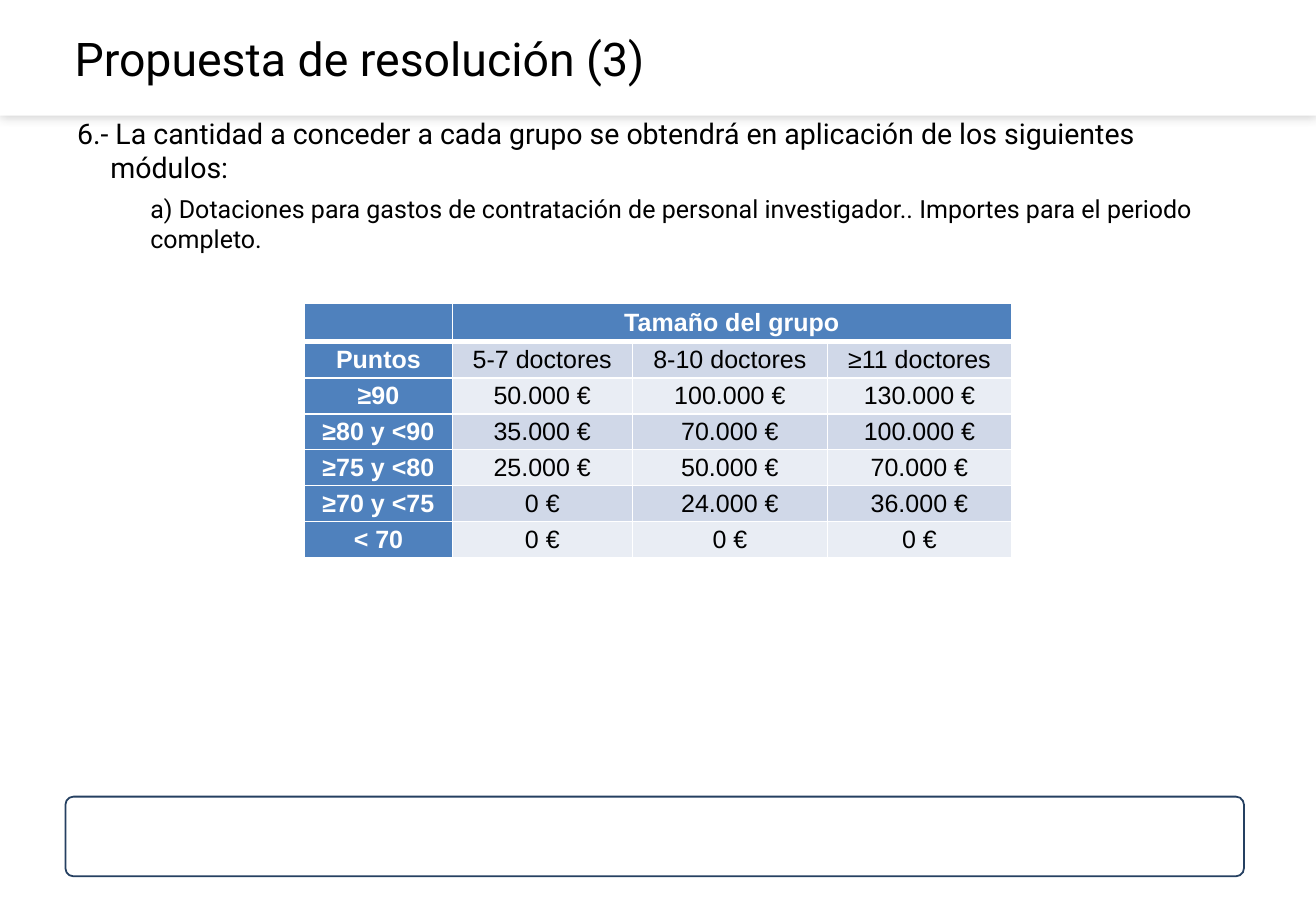
from lxml.etree import SubElement
from pptx import Presentation
from pptx.dml.color import RGBColor
from pptx.enum.shapes import MSO_SHAPE
from pptx.enum.text import MSO_ANCHOR, PP_ALIGN
from pptx.oxml.ns import qn
from pptx.util import Inches, Pt

TITLE = "Propuesta de resolución (3)"
MODULES = "6.- La cantidad a conceder a cada grupo se obtendrá en aplicación de los siguientes módulos:"
STAFF = ("a) Dotaciones para gastos de contratación de personal investigador.. "
         "Importes para el periodo completo.")
GRANTS = [
    ("", "Tamaño del grupo", "", ""),
    ("Puntos", "5-7 doctores", "8-10 doctores", "≥11 doctores"),
    ("≥90", "50.000 €", "100.000 €", "130.000 €"),
    ("≥80 y <90", "35.000 €", "70.000 €", "100.000 €"),
    ("≥75 y <80", "25.000 €", "50.000 €", "70.000 €"),
    ("≥70 y <75", "0 €", "24.000 €", "36.000 €"),
    ("< 70", "0 €", "0 €", "0 €"),
]
COLUMN_WIDTHS = (1.15, 1.4, 1.52, 1.43)
ROW_HEIGHT = 0.28
COLORS = {"white": "FFFFFF", "black": "000000", "navy": "254061",
          "header": "4F81BD", "dark_band": "D0D8E8", "light_band": "E9EDF4"}


def rgb(name):
    return RGBColor.from_string(COLORS[name])


def write_text(paragraph, text, size=14, font="Roboto", color="black", bold=False,
               align=PP_ALIGN.LEFT, left=0, indent=0, before=0):
    """Fill a paragraph; left and indent are in inches, before in points."""
    paragraph.alignment = align
    paragraph.space_before = Pt(before)
    properties = paragraph._p.get_or_add_pPr()
    properties.set("marL", str(Inches(left)))
    properties.set("indent", str(Inches(indent)))
    run = paragraph.add_run()
    run.text = text
    run.font.size, run.font.name, run.font.bold = Pt(size), font, bold
    run.font.color.rgb = rgb(color)


def add_panel(slide, kind, left, top, width, height):
    shape = slide.shapes.add_shape(kind, Inches(left), Inches(top), Inches(width), Inches(height))
    shape.shadow.inherit = False
    shape.fill.solid()
    shape.fill.fore_color.rgb = rgb("white")
    shape.line.fill.background()
    return shape


def add_text_frame(slide, left, top, width, height, anchor=MSO_ANCHOR.TOP):
    box = slide.shapes.add_textbox(Inches(left), Inches(top), Inches(width), Inches(height))
    frame = box.text_frame
    frame.word_wrap = True
    frame.vertical_anchor = anchor
    frame.margin_left = frame.margin_right = Inches(0.07)
    frame.margin_top = frame.margin_bottom = Inches(0.03)
    return frame


def add_soft_shadow(shape):
    effects = shape._element.spPr.find(qn("a:effectLst"))
    shadow = SubElement(effects, qn("a:outerShdw"), blurRad=str(Pt(6)), dist="0",
                        dir=str(225 * 60000), rotWithShape="0")
    color = SubElement(shadow, qn("a:srgbClr"), val=COLORS["black"])
    SubElement(color, qn("a:alpha"), val="20000")


def set_borders(cell, bottom=1):
    """Draw white borders, placed before the fill as the schema asks."""
    properties = cell._tc.get_or_add_tcPr()
    for position, (side, width) in enumerate((("L", 1), ("R", 1), ("T", 1), ("B", bottom))):
        line = SubElement(properties, qn(f"a:ln{side}"), w=str(Pt(width)))
        fill = SubElement(line, qn("a:solidFill"))
        SubElement(fill, qn("a:srgbClr"), val=COLORS["white"])
        properties.insert(position, line)


def add_grants_table(slide, left, top):
    table = slide.shapes.add_table(
        len(GRANTS), len(COLUMN_WIDTHS), Inches(left), Inches(top),
        Inches(sum(COLUMN_WIDTHS)), Inches(ROW_HEIGHT * len(GRANTS))).table
    for column, width in zip(table.columns, COLUMN_WIDTHS):
        column.width = Inches(width)
    for row_index, values in enumerate(GRANTS):
        table.rows[row_index].height = Inches(ROW_HEIGHT)
        band = "dark_band" if row_index % 2 else "light_band"
        for column_index, value in enumerate(values):
            cell = table.cell(row_index, column_index)
            heading = row_index == 0 or column_index == 0
            cell.vertical_anchor = MSO_ANCHOR.MIDDLE
            cell.margin_left = cell.margin_right = Inches(0.05)
            cell.margin_top = cell.margin_bottom = 0
            cell.fill.solid()
            cell.fill.fore_color.rgb = rgb("header" if heading else band)
            set_borders(cell, bottom=1 if row_index else 3)
            write_text(cell.text_frame.paragraphs[0], value, font="Arial", bold=heading,
                       color="white" if heading else "black", align=PP_ALIGN.CENTER)
    table.cell(0, 1).merge(table.cell(0, len(COLUMN_WIDTHS) - 1))


def main():
    presentation = Presentation()
    presentation.slide_width, presentation.slide_height = Inches(10.24), Inches(7.09)
    slide = presentation.slides.add_slide(presentation.slide_layouts[6])

    title_bar = add_panel(slide, MSO_SHAPE.RECTANGLE, 0, 0, 10.24, 0.9)
    add_soft_shadow(title_bar)
    footer = add_panel(slide, MSO_SHAPE.ROUNDED_RECTANGLE, 0.51, 6.2, 9.17, 0.62)
    footer.adjustments[0] = 0.1
    footer.line.color.rgb = rgb("navy")
    footer.line.width = Pt(1)

    title = add_text_frame(slide, 0.51, 0.09, 9.21, 0.73, MSO_ANCHOR.MIDDLE)
    write_text(title.paragraphs[0], TITLE, size=26)
    body = add_text_frame(slide, 0.53, 0.87, 9.24, 5.28)
    write_text(body.paragraphs[0], MODULES, size=16, left=0.26, indent=-0.26)
    write_text(body.add_paragraph(), STAFF, left=0.57, before=5)

    add_grants_table(slide, 2.37, 2.36)
    presentation.save("out.pptx")


if __name__ == "__main__":
    main()
